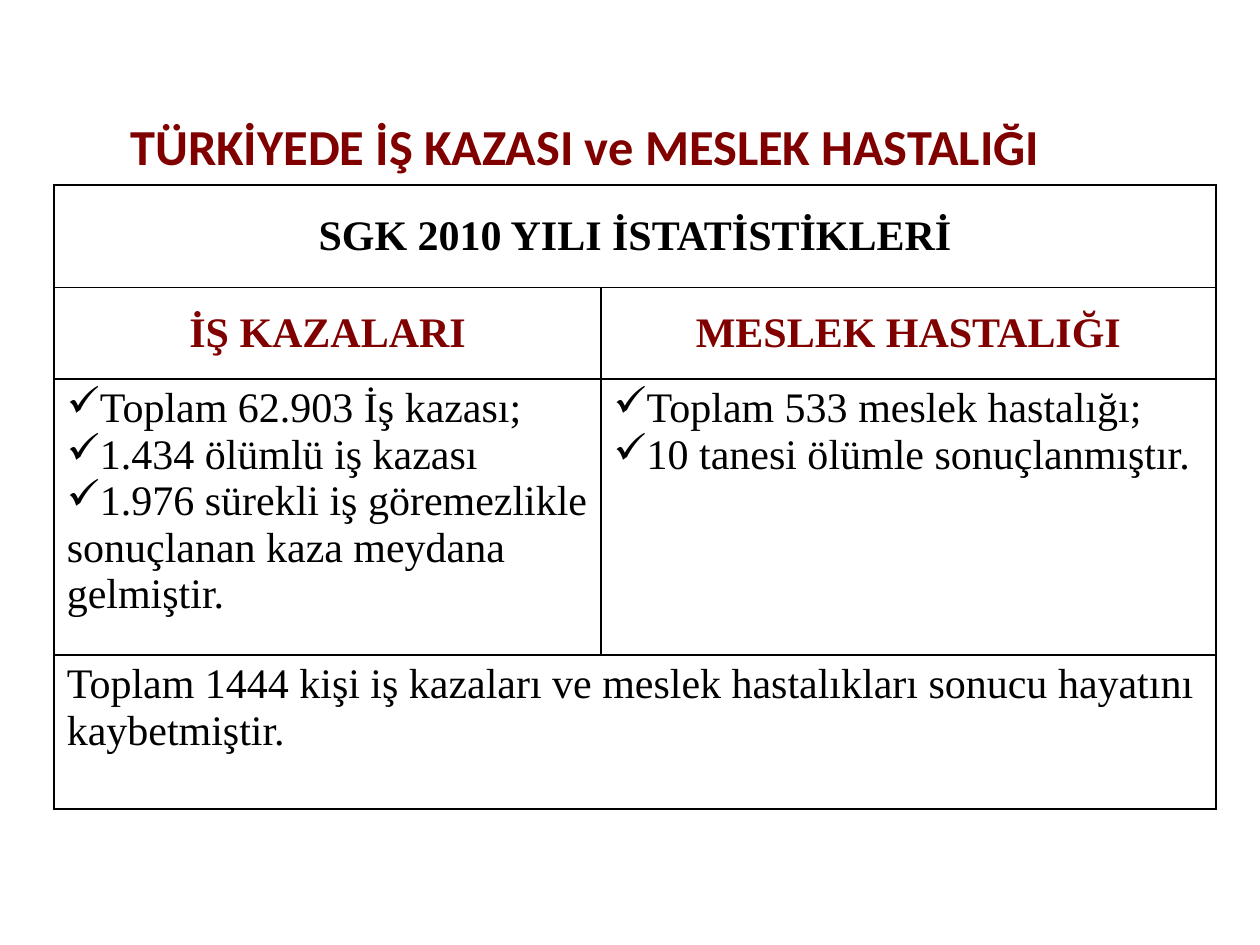
from lxml import etree
from pptx import Presentation
from pptx.dml.color import RGBColor
from pptx.enum.text import MSO_ANCHOR, PP_ALIGN
from pptx.oxml.ns import qn
from pptx.util import Inches, Pt

CENTER, LEFT = PP_ALIGN.CENTER, PP_ALIGN.LEFT
MIDDLE, TOP = MSO_ANCHOR.MIDDLE, MSO_ANCHOR.TOP
MAROON = RGBColor(0x80, 0x00, 0x00)
BLACK = RGBColor(0x00, 0x00, 0x00)

TITLE = "TÜRKİYEDE İŞ KAZASI ve MESLEK HASTALIĞI"
HEADING = {"color": BLACK, "bold": True, "align": CENTER, "anchor": MIDDLE}
SUBHEADING = {**HEADING, "color": MAROON}
BODY = {"color": BLACK, "bold": False, "align": LEFT, "anchor": TOP}
CHECKLIST = {**BODY, "bullet": "✓"}

# Each row: height, style, and one list of paragraphs per cell.
# A row with a single cell spans the whole table.
ROWS = [
    (0.81, HEADING, [["SGK 2010 YILI İSTATİSTİKLERİ"]]),
    (0.73, SUBHEADING, [["İŞ KAZALARI"], ["MESLEK HASTALIĞI"]]),
    (2.19, CHECKLIST, [
        ["Toplam 62.903 İş kazası;",
         "1.434 ölümlü iş kazası",
         "1.976 sürekli iş göremezlikle sonuçlanan kaza meydana gelmiştir."],
        ["Toplam 533 meslek hastalığı;",
         "10 tanesi ölümle sonuçlanmıştır."],
    ]),
    (1.22, BODY, [["Toplam 1444 kişi iş kazaları ve meslek hastalıkları "
                   "sonucu hayatını kaybetmiştir."]]),
]
COLUMN_WIDTHS = [4.34, 4.88]
TABLE_LEFT, TABLE_TOP = 0.43, 1.47


def add_span(paragraph, text, font_name, size, color, bold):
    span = paragraph.add_run()
    span.text = text
    span.font.name = font_name
    span.font.size = Pt(size)
    span.font.bold = bold
    span.font.color.rgb = color


def add_bullet(paragraph, character):
    properties = paragraph._p.get_or_add_pPr()
    properties.set("marL", "0")
    properties.set("indent", "0")
    etree.SubElement(properties, qn("a:buChar"), char=character)


def add_borders(cell):
    properties = cell._tc.get_or_add_tcPr()
    for index, side in enumerate(("lnL", "lnR", "lnT", "lnB")):
        line = etree.Element(qn(f"a:{side}"), w=str(Pt(1)))
        fill = etree.SubElement(line, qn("a:solidFill"))
        etree.SubElement(fill, qn("a:srgbClr"), val=str(BLACK))
        properties.insert(index, line)


def fill_cell(cell, paragraphs, style):
    cell.vertical_anchor = style["anchor"]
    frame = cell.text_frame
    for index, text in enumerate(paragraphs):
        paragraph = frame.add_paragraph() if index else frame.paragraphs[0]
        paragraph.alignment = style["align"]
        if "bullet" in style:
            add_bullet(paragraph, style["bullet"])
        add_span(paragraph, text, "Times New Roman", 24, style["color"], style["bold"])


def add_title(page):
    title = page.shapes.title
    title.left, title.top = Inches(TABLE_LEFT), Inches(0.84)
    title.width, title.height = Inches(8.43), Inches(0.63)
    frame = title.text_frame
    frame.word_wrap = True
    frame.vertical_anchor = MIDDLE
    paragraph = frame.paragraphs[0]
    paragraph.alignment = CENTER
    add_span(paragraph, TITLE, "Calibri", 28.8, MAROON, True)


def add_statistics(page):
    heights = [height for height, _, _ in ROWS]
    table = page.shapes.add_table(
        len(ROWS), len(COLUMN_WIDTHS), Inches(TABLE_LEFT), Inches(TABLE_TOP),
        Inches(sum(COLUMN_WIDTHS)), Inches(sum(heights))).table
    table.first_row = table.horz_banding = False
    for column, width in zip(table.columns, COLUMN_WIDTHS):
        column.width = Inches(width)
    for row_index, (height, style, contents) in enumerate(ROWS):
        row = table.rows[row_index]
        row.height = Inches(height)
        for cell in row.cells:
            cell.fill.background()
            add_borders(cell)
        if len(contents) == 1:
            row.cells[0].merge(table.cell(row_index, len(COLUMN_WIDTHS) - 1))
        for cell, paragraphs in zip(row.cells, contents):
            fill_cell(cell, paragraphs, style)


def main():
    deck = Presentation()
    deck.slide_width, deck.slide_height = Inches(10), Inches(7.5)
    page = deck.slides.add_slide(deck.slide_layouts[5])
    add_statistics(page)
    add_title(page)
    deck.save("out.pptx")


if __name__ == "__main__":
    main()
